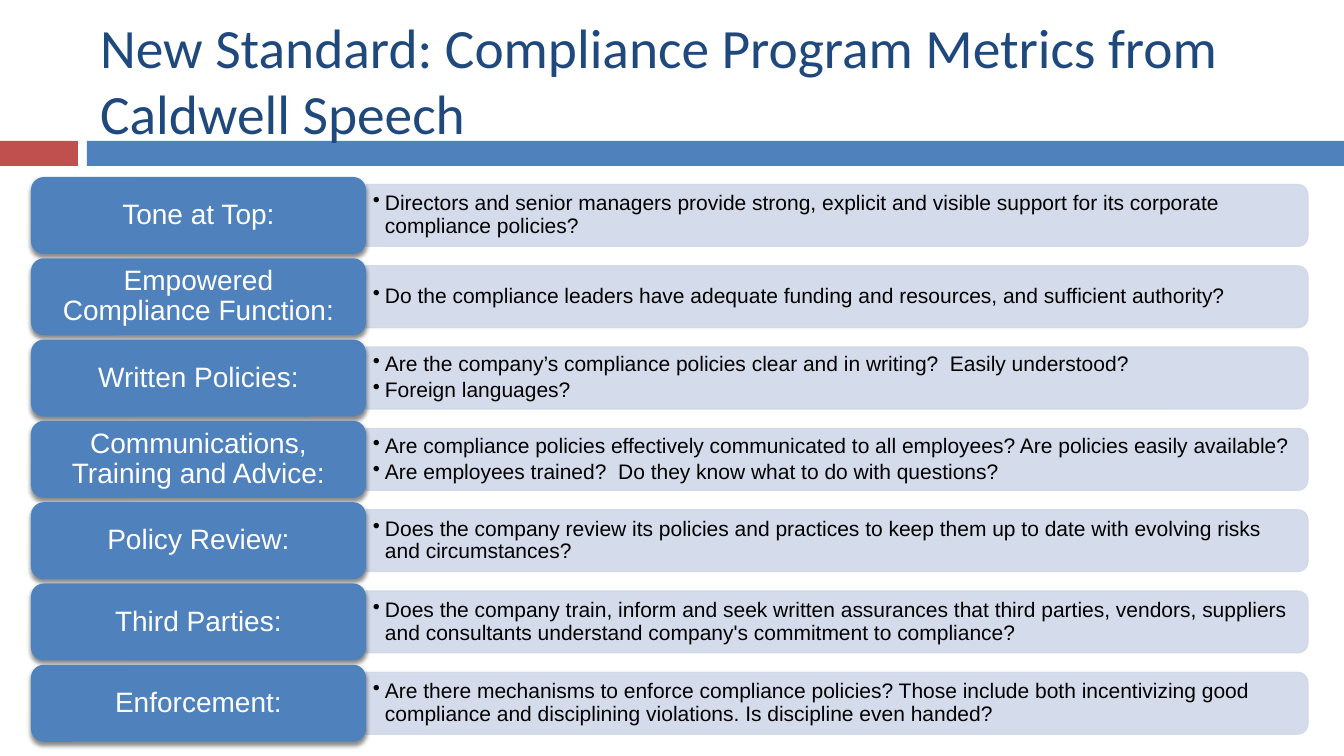
import pptx
import pptx.util
import pptx.dml.color
import pptx.enum.shapes
import pptx.enum.text
import pptx.oxml
import pptx.oxml.ns

PX = 12192000 / 1344
NAMESPACE = pptx.oxml.ns.nsdecls("a")
SHAPES = pptx.enum.shapes.MSO_SHAPE
ANCHOR = pptx.enum.text.MSO_ANCHOR
ALIGN = pptx.enum.text.PP_ALIGN
BLUE, RED, PALE, NAVY = "4F81BD", "C0504D", "D0D8E8", "1F497D"
ROW_TOP, ROW_PITCH = 177, 81.3
LABEL_HEIGHT, BAND_HEIGHT, BAND_WIDTH, BAND_LEFT = 77, 62, 942, 366

topics = [
    ("Tone at Top:", ["Directors and senior managers provide strong, explicit and visible support for its corporate compliance policies?"]),
    ("Empowered Compliance Function:", ["Do the compliance leaders have adequate funding and resources, and sufficient authority?"]),
    ("Written Policies:", ["Are the company’s compliance policies clear and in writing?  Easily understood?",
                           "Foreign languages?"]),
    ("Communications, Training and Advice:", ["Are compliance policies effectively communicated to all employees? Are policies easily available?",
                                              "Are employees trained?  Do they know what to do with questions?"]),
    ("Policy Review:", ["Does the company review its policies and practices to keep them up to date with evolving risks and circumstances?"]),
    ("Third Parties:", ["Does the company train, inform and seek written assurances that third parties, vendors, suppliers and consultants understand company's commitment to compliance?"]),
    ("Enforcement:", ["Are there mechanisms to enforce compliance policies? Those include both incentivizing good compliance and disciplining violations. Is discipline even handed?"]),
]


def color(value):
    return pptx.dml.color.RGBColor.from_string(value)


def box(*lengths):
    return [pptx.util.Emu(round(length * PX)) for length in lengths]


presentation = pptx.Presentation()
presentation.slide_width, presentation.slide_height = box(1344, 756)
slide = presentation.slides.add_slide(presentation.slide_layouts[5])

for left, width, fill in [(0, 78, RED), (87, 1257, BLUE)]:
    stripe = slide.shapes.add_shape(SHAPES.RECTANGLE, *box(left, 141, width, 25))
    stripe.shadow.inherit = False
    stripe.fill.solid()
    stripe.fill.fore_color.rgb = color(fill)
    stripe.line.fill.background()

title = slide.shapes.title
slide.shapes._spTree.append(title._element)
title.left, title.top, title.width, title.height = box(90, 25, 1198, 109)
title.text_frame.text = "New Standard: Compliance Program Metrics from Caldwell Speech"
title.text_frame.word_wrap = True
title.text_frame.auto_size = pptx.enum.text.MSO_AUTO_SIZE.NONE
title.text_frame.vertical_anchor = ANCHOR.MIDDLE
title.text_frame.paragraphs[0].alignment = ALIGN.LEFT
title_font = title.text_frame.paragraphs[0].runs[0].font
title_font.name = "Calibri"
title_font.size = pptx.util.Pt(39.6)
title_font.color.rgb = color(NAVY)

for row, (topic, questions) in enumerate(topics):
    top = ROW_TOP + row * ROW_PITCH
    middle = top + LABEL_HEIGHT / 2

    band = slide.shapes.add_shape(SHAPES.ROUND_2_SAME_RECTANGLE, *box(
        BAND_LEFT + (BAND_WIDTH - BAND_HEIGHT) / 2, middle - BAND_WIDTH / 2, BAND_HEIGHT, BAND_WIDTH))
    band.rotation = 90
    band.shadow.inherit = False
    band.fill.solid()
    band.fill.fore_color.rgb = color(PALE)
    band.line.color.rgb = color(PALE)
    band.line.width = pptx.util.Pt(0.79)
    for swatch in band._element.spPr.iter(pptx.oxml.ns.qn("a:srgbClr")):
        swatch.append(pptx.oxml.parse_xml(f'<a:alpha {NAMESPACE} val="90000"/>'))

    detail = slide.shapes.add_textbox(*box(BAND_LEFT + 1, middle - 28, 938, 56))
    label = slide.shapes.add_shape(SHAPES.ROUNDED_RECTANGLE, *box(31, top, 335, LABEL_HEIGHT))
    label.fill.solid()
    label.fill.fore_color.rgb = color(BLUE)
    label.line.fill.background()
    label._element.spPr.append(pptx.oxml.parse_xml(
        f'<a:effectLst {NAMESPACE}><a:outerShdw blurRad="38100" dist="30480" dir="5400000" rotWithShape="0">'
        '<a:srgbClr val="000000"><a:alpha val="45000"/></a:srgbClr></a:outerShdw></a:effectLst>'))

    for shape, lines, size, ink, alignment, margins in [
        (detail, questions, 15, "000000", ALIGN.LEFT, (6, 3)),
        (label, [topic], 20, "FFFFFF", ALIGN.CENTER, (12, 8)),
    ]:
        frame = shape.text_frame
        frame.text = "\n".join(lines)
        frame.word_wrap = True
        frame.vertical_anchor = ANCHOR.MIDDLE
        frame.margin_left, frame.margin_top = box(*margins)
        frame.margin_right, frame.margin_bottom = box(*margins)
        for paragraph in frame.paragraphs:
            paragraph.alignment = alignment
            paragraph.line_spacing = 0.9
            font = paragraph.runs[0].font
            font.name = "Arial"
            font.size = pptx.util.Pt(size)
            font.color.rgb = color(ink)

    for paragraph in detail.text_frame.paragraphs:
        paragraph.space_after = pptx.util.Pt(2.25)
        properties = paragraph._p.get_or_add_pPr()
        indent = box(12)[0]
        properties.set("marL", str(indent))
        properties.set("indent", str(-indent))
        properties.append(pptx.oxml.parse_xml(f'<a:buChar {NAMESPACE} char="•"/>'))

presentation.save("out.pptx")
